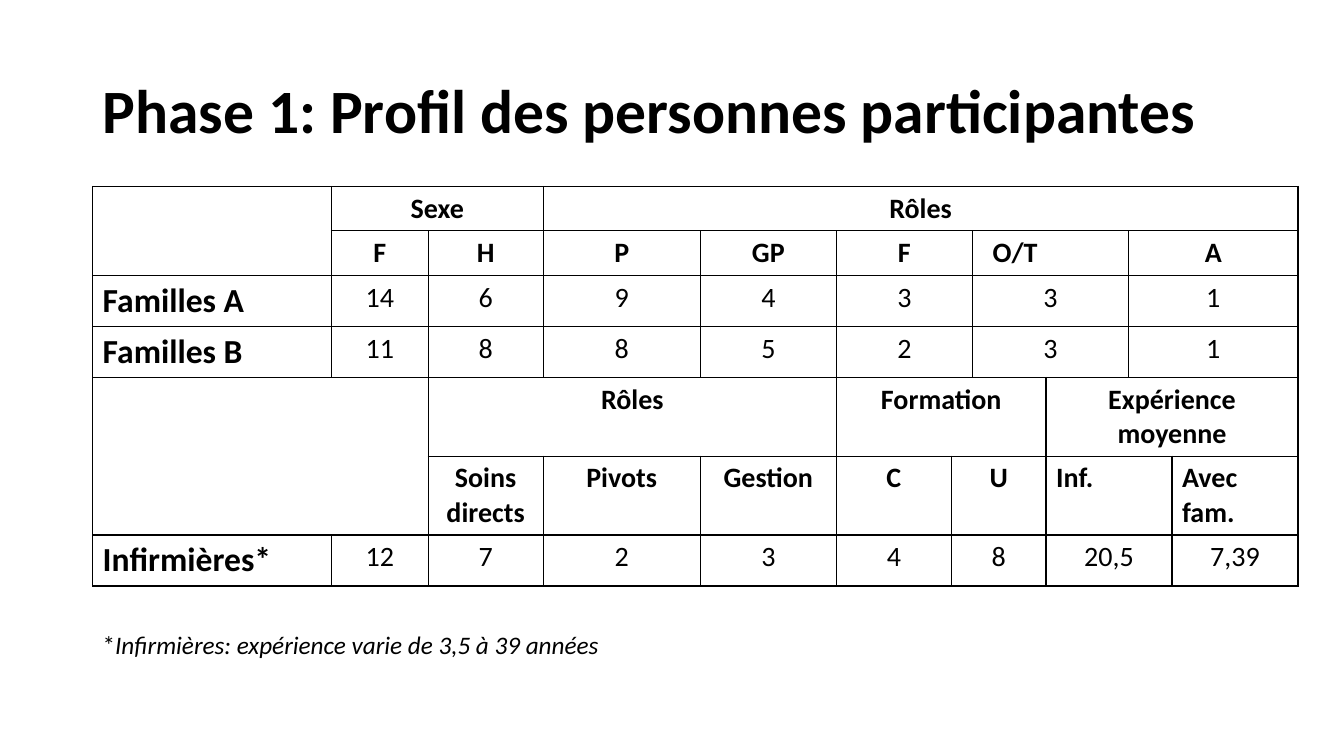
from dataclasses import dataclass

from lxml.etree import SubElement
from pptx import Presentation
from pptx.dml.color import RGBColor
from pptx.enum.text import MSO_ANCHOR, MSO_AUTO_SIZE, PP_ALIGN
from pptx.oxml.ns import qn
from pptx.util import Pt


@dataclass(frozen=True)
class Theme:
    font: str = "Calibri"
    ink: RGBColor = RGBColor(0, 0, 0)
    title: int = 44
    group: int = 24
    cell: int = 20
    note: int = 18
    border: int = 1


def write(paragraph, text, theme, size, bold=False, italic=False, align=PP_ALIGN.LEFT):
    paragraph.alignment = align
    run = paragraph.add_run()
    run.text = text
    run.font.name = theme.font
    run.font.size = Pt(size)
    run.font.bold = bold
    run.font.italic = italic
    run.font.color.rgb = theme.ink


class ProfileSlide:
    def __init__(self, deck, theme):
        self.theme = theme
        self.slide = deck.slides.add_slide(deck.slide_layouts[5])

    def title(self, text, left, top, width, height):
        heading = self.slide.shapes.title
        heading.left, heading.top = Pt(left), Pt(top)
        heading.width, heading.height = Pt(width), Pt(height)
        frame = heading.text_frame
        frame.auto_size = MSO_AUTO_SIZE.NONE
        frame.vertical_anchor = MSO_ANCHOR.MIDDLE
        frame.paragraphs[0].line_spacing = 0.9
        write(frame.paragraphs[0], text, self.theme, self.theme.title, bold=True)

    def note(self, parts, left, top, width, height):
        box = self.slide.shapes.add_textbox(Pt(left), Pt(top), Pt(width), Pt(height))
        box.text_frame.word_wrap = True
        for text, italic in parts:
            write(box.text_frame.paragraphs[0], text, self.theme, self.theme.note, italic=italic)

    def grid(self, left, top, widths, heights):
        frame = self.slide.shapes.add_table(
            len(heights), len(widths), Pt(left), Pt(top), Pt(sum(widths)), Pt(sum(heights)))
        table = frame.table
        table.first_row = table.horz_banding = False
        for column, width in zip(table.columns, widths):
            column.width = Pt(width)
        for row, height in zip(table.rows, heights):
            row.height = Pt(height)
        for cell in table.iter_cells():
            self.outline(cell)
        return table

    def outline(self, cell):
        properties = cell._tc.get_or_add_tcPr()
        for side in ("a:lnL", "a:lnR", "a:lnT", "a:lnB"):
            line = SubElement(properties, qn(side), w=str(Pt(self.theme.border)))
            fill = SubElement(line, qn("a:solidFill"))
            SubElement(fill, qn("a:srgbClr"), val=str(self.theme.ink))
        cell.fill.background()

    def row(self, table, index, entries, start=0, bold=False, left_aligned=()):
        column = start
        for text, span in entries:
            cell = table.cell(index, column)
            if span > 1:
                cell.merge(table.cell(index, column + span - 1))
            group = column == 0
            align = PP_ALIGN.LEFT if group or text in left_aligned else PP_ALIGN.CENTER
            write(cell.text_frame.paragraphs[0], text, self.theme,
                  self.theme.group if group else self.theme.cell,
                  bold=bold or group, align=align)
            column += span


FAMILY_SPANS = (1, 1, 1, 1, 1, 2, 2, 2)
NURSE_SPANS = (1, 1, 1, 1, 1, 1, 2, 2, 1)
COLUMN_WIDTHS = (170.6, 69.1, 82.1, 112.3, 97.2, 82.1, 15.1, 52.6, 59, 31, 90)
ROW_HEIGHTS = (31.6, 31.6, 36.5, 36.5, 56, 56, 36.5)


def main():
    deck = Presentation()
    deck.slide_width, deck.slide_height = Pt(960), Pt(540)
    profile = ProfileSlide(deck, Theme())
    profile.title("Phase 1: Profil des personnes participantes", 66, 28.8, 828, 104.4)

    participants = profile.grid(66.2, 133.2, COLUMN_WIDTHS, ROW_HEIGHTS)
    participants.cell(0, 0).merge(participants.cell(1, 0))
    participants.cell(4, 0).merge(participants.cell(5, 1))

    profile.row(participants, 0, [("Sexe", 2), ("Rôles", 8)], start=1, bold=True)
    profile.row(participants, 1, zip(("F", "H", "P", "GP", "F", "O/T", "A"), FAMILY_SPANS[1:]),
                start=1, bold=True, left_aligned=("O/T",))
    participants.cell(1, 7).margin_left = Pt(14.4)
    families = (
        ("Familles A", "14", "6", "9", "4", "3", "3", "1"),
        ("Familles B", "11", "8", "8", "5", "2", "3", "1"),
    )
    for index, family in enumerate(families, 2):
        profile.row(participants, index, zip(family, FAMILY_SPANS))

    profile.row(participants, 4, [("Rôles", 3), ("Formation", 3), ("Expérience moyenne", 3)],
                start=2, bold=True)
    nurse_headings = ("Soins directs", "Pivots", "Gestion", "C", "U", "Inf.", "Avec fam.")
    profile.row(participants, 5, zip(nurse_headings, NURSE_SPANS[2:]),
                start=2, bold=True, left_aligned=("Inf.", "Avec fam."))
    nurses = ("Infirmières*", "12", "7", "2", "3", "4", "8", "20,5", "7,39")
    profile.row(participants, 6, zip(nurses, NURSE_SPANS))

    profile.note([("*", False), ("Infirmières: expérience varie de 3,5 à 39 années", True)],
                 66.2, 445.7, 465, 29)
    deck.save("out.pptx")


if __name__ == "__main__":
    main()
